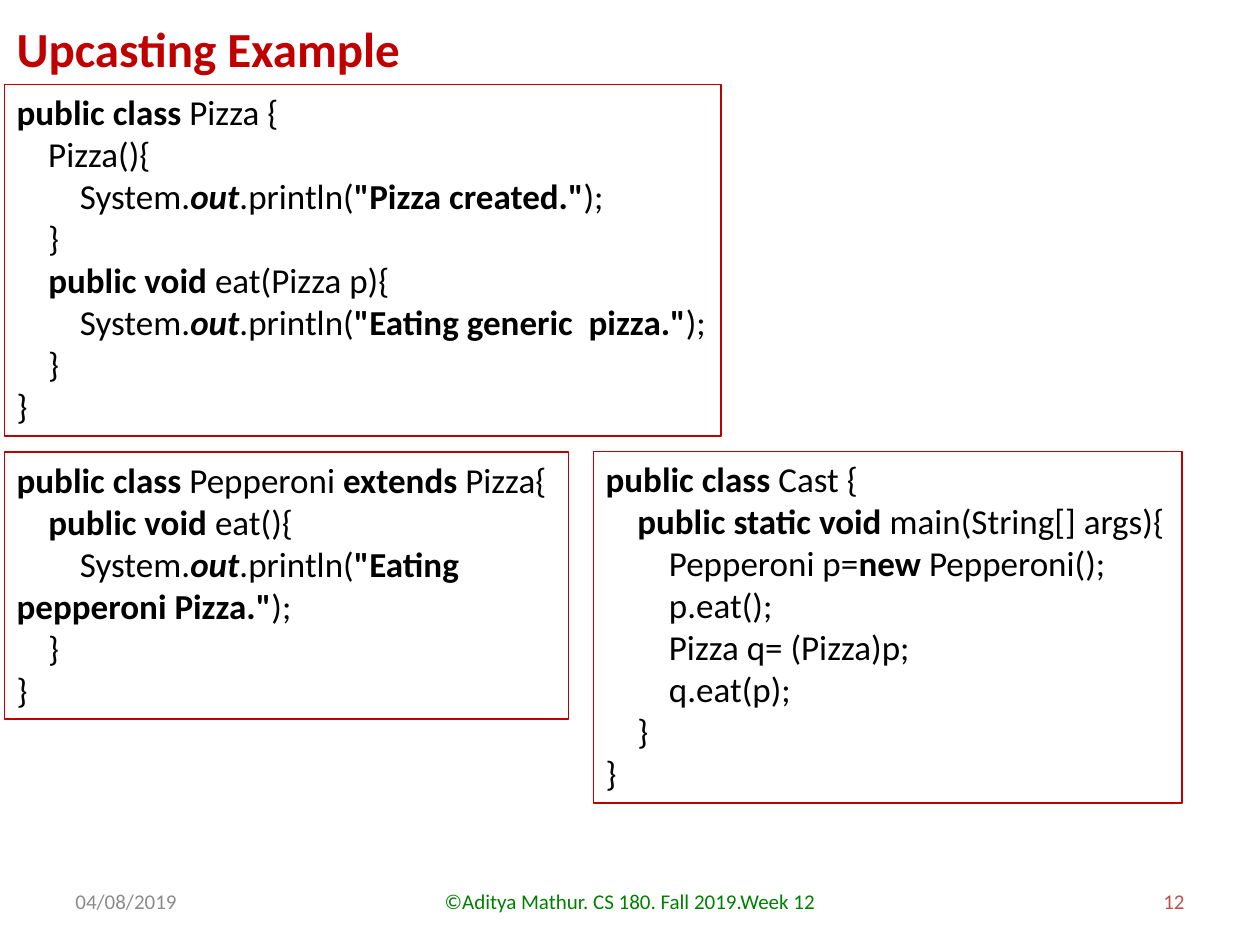
from pptx import Presentation
from pptx.dml.color import RGBColor as RGB
from pptx.enum.shapes import MSO_SHAPE as Shape
from pptx.enum.text import MSO_ANCHOR as Anchor, MSO_AUTO_SIZE as Fit, PP_ALIGN as Align
from pptx.util import Pt

HUES = {"red": "C00000", "ink": "000000", "grey": "8C8C8C",
        "green": "008000", "rust": "C0504D"}

PIZZA = """*public class *Pizza {
    Pizza(){
        System.*out*.println(*"Pizza created."*);
    }
    *public void *eat(Pizza p){
        System.*out*.println(*"Eating generic  pizza."*);
    }
}"""

PEPPERONI = """*public class *Pepperoni *extends *Pizza{
    *public void *eat(){
        System.*out*.println(*"Eating pepperoni Pizza."*);
    }
}"""

CAST = """*public class *Cast {
    *public static void *main(String[] args){
        Pepperoni p=*new *Pepperoni();
        p.eat();
        Pizza q= (Pizza)p;
        q.eat(p);
    }
}"""


def style(item, form):
    for key, value in form.items():
        setattr(item, key, value)


def add_run(para, text, size, hue, **form):
    run = para.add_run()
    run.text = text
    style(run.font, {"name": "Calibri", "size": Pt(size), **form})
    run.font.color.rgb = RGB.from_string(HUES[hue])


def add_label(slide, box, text, size, hue, align=Align.LEFT,
              anchor=Anchor.MIDDLE, bold=False):
    frame = slide.shapes.add_textbox(*map(Pt, box)).text_frame
    style(frame, {"word_wrap": True, "vertical_anchor": anchor})
    para = frame.paragraphs[0]
    para.alignment = align
    add_run(para, text, size, hue, bold=bold)


def add_code(slide, box, code, wrap=True):
    shape = slide.shapes.add_shape(Shape.RECTANGLE, *map(Pt, box))
    shape.shadow.inherit = False
    shape.fill.background()
    shape.line.color.rgb = RGB.from_string(HUES["red"])
    shape.line.width = Pt(0.75)
    frame = shape.text_frame
    style(frame, {"word_wrap": wrap, "vertical_anchor": Anchor.TOP,
                  "auto_size": Fit.SHAPE_TO_FIT_TEXT})
    para = frame.paragraphs[0]
    para.alignment = Align.LEFT
    for row, line in enumerate(code.split("\n")):
        if row:
            para.add_line_break()
        for spot, part in enumerate(line.split("*")):
            if part:
                add_run(para, part, 20, "ink", bold=spot % 2 == 1,
                        italic=part == "out")


def main():
    deck = Presentation()
    style(deck, {"slide_width": Pt(720), "slide_height": Pt(540)})
    slide = deck.slides.add_slide(deck.slide_layouts[6])
    add_label(slide, (36, 500.5, 168, 28.75), "04/08/2019", 12, "grey")
    add_label(slide, (246, 500.5, 228, 28.75),
              "©Aditya Mathur. CS 180. Fall 2019.Week 12", 12, "green", Align.CENTER)
    add_label(slide, (516, 500.5, 168, 28.75), "12", 12, "rust", Align.RIGHT)
    add_label(slide, (2.4, 7.2, 336, 41), "Upcasting Example", 28, "red",
              anchor=Anchor.TOP, bold=True)
    add_code(slide, (339, 257.8, 336.5, 201), CAST, wrap=False)
    add_code(slide, (2.4, 258.2, 322.5, 152.7), PEPPERONI)
    add_code(slide, (2.4, 48.2, 409.7, 201), PIZZA)
    deck.save("out.pptx")


if __name__ == "__main__":
    main()
